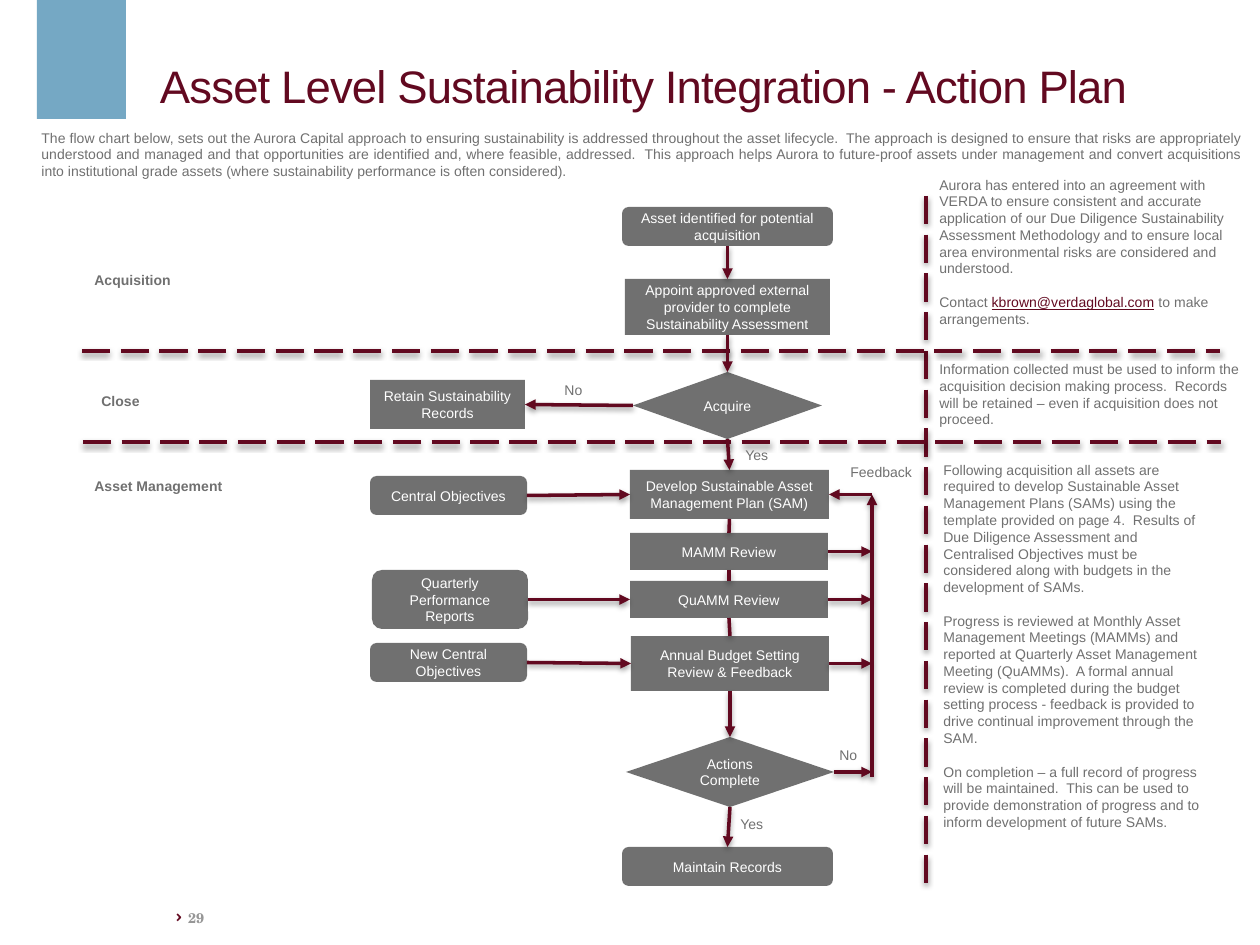
from dataclasses import dataclass

from lxml import etree
from pptx import Presentation
from pptx.dml.color import RGBColor
from pptx.enum.dml import MSO_LINE
from pptx.enum.shapes import MSO_CONNECTOR, MSO_SHAPE
from pptx.enum.text import MSO_ANCHOR, PP_ALIGN
from pptx.oxml.ns import qn
from pptx.util import Emu, Pt

RECT, DIAMOND = MSO_SHAPE.RECTANGLE, MSO_SHAPE.DIAMOND
ROUND = MSO_SHAPE.FLOWCHART_ALTERNATE_PROCESS
STRAIGHT, DASH = MSO_CONNECTOR.STRAIGHT, MSO_LINE.LONG_DASH
LEFT, CENTER, JUSTIFY = PP_ALIGN.LEFT, PP_ALIGN.CENTER, PP_ALIGN.JUSTIFY
TOP, MIDDLE, BOTTOM = MSO_ANCHOR.TOP, MSO_ANCHOR.MIDDLE, MSO_ANCHOR.BOTTOM
UP, WEST, DOWN, EAST = range(4)


@dataclass(frozen=True)
class Theme:
    wine: str = "620920"
    gray: str = "707070"
    pale: str = "969696"
    blue: str = "75A8C4"
    white: str = "FFFFFF"
    font: str = "Arial"
    serif: str = "TeX Gyre Schola"
    sign: str = "Noto Sans"
    head: float = 26
    body: float = 8
    mark: float = 10
    line: float = 2
    gap: float = 9.6


THEME = Theme()
TITLE = "Asset Level Sustainability Integration - Action Plan"
INTRO = (
    "The flow chart below, sets out the Aurora Capital approach to ensuring sustainability is "
    "addressed throughout the asset lifecycle.  The approach is designed to ensure that risks are "
    "appropriately understood and managed and that opportunities are identified and, where "
    "feasible, addressed.  This approach helps Aurora to future-proof assets under management and "
    "convert acquisitions into institutional grade assets (where sustainability performance is "
    "often considered)."
)
MAIL = "kbrown@verdaglobal.com"
DEAL = [
    (0, "Aurora has entered into an agreement with VERDA to ensure consistent and accurate "
        "application of our Due Diligence Sustainability Assessment Methodology and to ensure "
        "local area environmental risks are considered and understood."),
    (1, f"Contact {MAIL} to make arrangements."),
    (2, "Information collected must be used to inform the acquisition decision making process.  "
        "Records will be retained – even if acquisition does not proceed."),
]
CARE = [
    (0, "Following acquisition all assets are required to develop Sustainable Asset Management "
        "Plans (SAMs) using the template provided on page 4.  Results of Due Diligence Assessment "
        "and Centralised Objectives must be considered along with budgets in the development of "
        "SAMs."),
    (1, "Progress is reviewed at Monthly Asset Management Meetings (MAMMs) and reported at "
        "Quarterly Asset Management Meeting (QuAMMs).  A formal annual review is completed during "
        "the budget setting process - feedback is provided to drive continual improvement through "
        "the SAM."),
    (1, "On completion – a full record of progress will be maintained.  This can be used to "
        "provide demonstration of progress and to inform development of future SAMs."),
]
NOTES = [(DEAL, (927, 170, 330, 267)), (CARE, (931, 455, 291, 437))]
STAGES = [
    ("Acquisition", (82, 265, 111, 30)),
    ("Close", (89, 386, 71, 30)),
    ("Asset Management", (82, 471, 176, 30)),
]
LABELS = [
    ("No", (552, 375, 44, 30)),
    ("Yes", (733, 440, 50, 30)),
    ("Feedback", (838, 457, 88, 30)),
    ("No", (827, 740, 44, 30)),
    ("Yes", (728, 809, 50, 30)),
]
STEPS = {
    "find": (ROUND, "Asset identified for potential acquisition", (622, 207, 211, 39)),
    "check": (RECT, "Appoint approved external provider to complete Sustainability Assessment",
              (625, 279, 205, 56)),
    "buy": (DIAMOND, "Acquire", (633, 372, 189, 67)),
    "retain": (RECT, "Retain Sustainability Records", (370, 380, 155, 49)),
    "plan": (RECT, "Develop Sustainable Asset Management Plan (SAM)", (630, 470, 199, 49)),
    "goals": (ROUND, "Central Objectives", (370, 476, 157, 39)),
    "month": (RECT, "MAMM Review", (630, 533, 198, 37)),
    "quarter": (RECT, "QuAMM Review", (630, 581, 198, 37)),
    "report": (ROUND, "Quarterly Performance Reports", (372, 570, 156, 59)),
    "budget": (RECT, "Annual Budget Setting Review & Feedback", (631, 636, 198, 55)),
    "fresh": (ROUND, "New Central Objectives", (370, 643, 157, 39)),
    "done": (DIAMOND, "Actions Complete", (626, 737, 208, 70)),
    "keep": (ROUND, "Maintain Records", (622, 847, 211, 39)),
}
LINKS = [
    ("find", DOWN, "check", UP, True),
    ("check", DOWN, "buy", UP, True),
    ("buy", DOWN, "plan", UP, True),
    ("buy", WEST, "retain", EAST, True),
    ("plan", DOWN, "month", UP, False),
    ("month", DOWN, "quarter", UP, False),
    ("quarter", DOWN, "budget", UP, False),
    ("budget", DOWN, "done", UP, True),
    ("done", DOWN, "keep", UP, True),
    ("goals", EAST, "plan", WEST, True),
    ("report", EAST, "quarter", WEST, True),
    ("fresh", EAST, "budget", WEST, True),
]
RAIL = 872
LOOP = ["month", "quarter", "budget", "done"]
BORDERS = [(926, 196, 926, 886), (82, 351, 1220, 351), (83, 442, 1221, 442)]

deck = Presentation()


def px(num):
    return Emu(round(num * 914400 / 126))


deck.slide_width, deck.slide_height = px(1260), px(945)
slide = deck.slides.add_slide(deck.slide_layouts[6])
shapes = slide.shapes


def style(para, size=THEME.body, color=THEME.gray, face=THEME.font, bold=False):
    font = para.font
    font.size, font.name, font.bold = Pt(size), face, bold
    font.color.rgb = RGBColor.from_string(color)


def write(box, spot, align=LEFT, anchor=TOP, wrap=True, flush=False, **look):
    item = shapes.add_textbox(*map(px, spot))
    frame = item.text_frame
    frame.word_wrap, frame.vertical_anchor = wrap, anchor
    if flush:
        frame.margin_left = frame.margin_right = frame.margin_top = frame.margin_bottom = 0
    for i, (gap, text) in enumerate(box):
        para = frame.add_paragraph() if i else frame.paragraphs[0]
        para.alignment = align
        if gap:
            para.space_before = Pt(gap * THEME.gap)
        style(para, **look)
        for part in text.partition(MAIL):
            if part:
                run = para.add_run()
                run.text = part
                if part == MAIL:
                    run.font.underline = True
                    run.font.color.rgb = RGBColor.from_string(THEME.wine)
    return item


def paint(kind, spot, color):
    item = shapes.add_shape(kind, *map(px, spot))
    item.shadow.inherit = False
    item.fill.solid()
    item.fill.fore_color.rgb = RGBColor.from_string(color)
    item.line.fill.background()
    return item


def draw(ends, arrow=True, dash=None):
    wire = shapes.add_connector(STRAIGHT, *map(px, ends))
    wire.line.width = Pt(THEME.line)
    wire.line.color.rgb = RGBColor.from_string(THEME.wine)
    if dash:
        wire.line.dash_style = dash
    props = wire.line._get_or_add_ln()
    if arrow:
        etree.SubElement(props, qn("a:tailEnd"), type="triangle")
    effects = etree.SubElement(wire._element.spPr, qn("a:effectLst"))
    shade = etree.SubElement(effects, qn("a:outerShdw"), blurRad="40000", dist="20000",
                             dir="5400000", rotWithShape="0")
    tint = etree.SubElement(shade, qn("a:srgbClr"), val="000000")
    etree.SubElement(tint, qn("a:alpha"), val="38000")
    return wire


paint(RECT, (37, 0, 89, 119), THEME.blue)
title = write([(0, TITLE)], (160, 3, 1065, 110), anchor=BOTTOM, flush=True,
              size=THEME.head, color=THEME.wine)
lead = title.text_frame.paragraphs[0]
lead.line_spacing = 0.9
lead.runs[0].font._element.set("spc", "-50")
write([(0, INTRO)], (29, 123, 1227, 81), align=JUSTIFY)
mark = write([(0, "⌃")], (161, 895, 28, 34), size=THEME.mark, color=THEME.wine,
             face=THEME.sign, bold=True)
mark.rotation = 90
write([(0, "29")], (188, 876, 117, 50), anchor=BOTTOM, flush=True,
      color=THEME.pale, face=THEME.serif, bold=True)

for ends in BORDERS:
    draw(ends, arrow=False, dash=DASH)

nodes = {}
for name, (kind, text, spot) in STEPS.items():
    node = nodes[name] = paint(kind, spot, THEME.gray)
    frame = node.text_frame
    frame.word_wrap, frame.vertical_anchor = True, MIDDLE
    para = frame.paragraphs[0]
    para.text, para.alignment = text, CENTER
    style(para, color=THEME.white)

for start, out, end, into, arrow in LINKS:
    wire = draw((0, 0, 0, 0), arrow)
    wire.begin_connect(nodes[start], out)
    wire.end_connect(nodes[end], into)

for name in LOOP:
    x, y, wide, high = STEPS[name][2]
    draw((x + wide, y + high / 2, RAIL, y + high / 2))
x, y, wide, high = STEPS["plan"][2]
draw((RAIL, 777, RAIL, y + high / 2))
draw((RAIL, y + high / 2, x + wide, y + high / 2))

for text, spot in STAGES:
    write([(0, text)], spot, bold=True)
for text, spot in LABELS:
    write([(0, text)], spot, wrap=False)
for box, spot in NOTES:
    write(box, spot)

deck.save("out.pptx")
